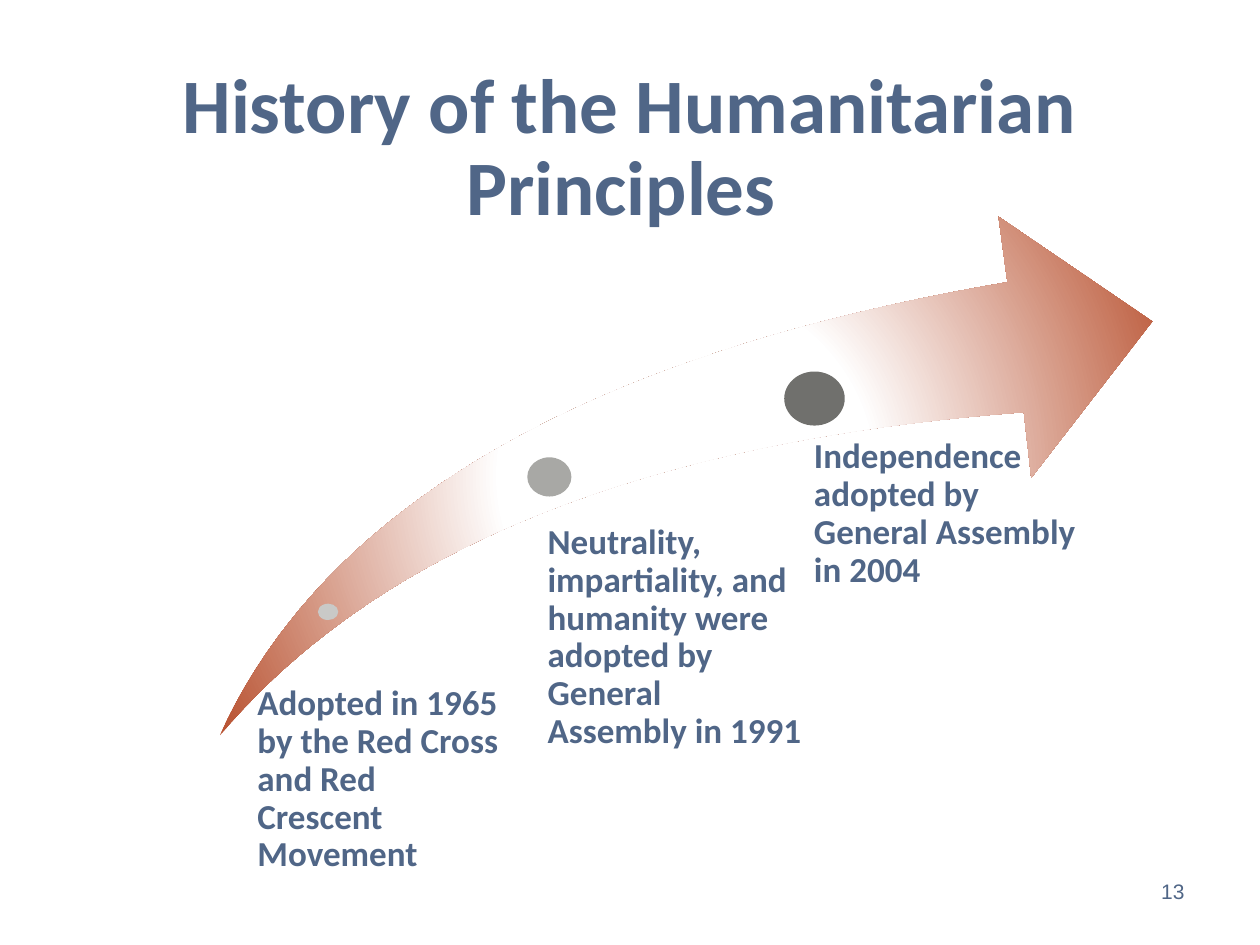
import pptx
import pptx.dml.color
import pptx.enum.shapes
import pptx.enum.text
import pptx.oxml
import pptx.oxml.ns
import pptx.util
from pptx.util import Cm

ALIGN = pptx.enum.text.PP_ALIGN
ANCHOR = pptx.enum.text.MSO_ANCHOR
INK = "506687"
CURVE_STEPS = 40

# Dot box, dot colour, label box, label inset and label, in cm from the arrow's corner
MILESTONES = [
    ((1.98, 7.8, 0.41, 0.33), "C9C9C7", (0.53, 9.45, 5.26, 3.02), 0.23,
     "Adopted in 1965 by the Red Cross and Red Crescent Movement"),
    ((6.2, 4.85, 0.89, 0.79), "A8A8A5", (6.2, 6.2, 5.54, 5.69), 0.41,
     "Neutrality, impartiality, and humanity were adopted by General Assembly in 1991"),
    ((11.38, 3.12, 1.22, 1.09), "70706D", (11.4, 4.47, 6.3, 7.29), 0.58,
     "Independence adopted by General Assembly in 2004"),
]


def color(hex_string):
    return pptx.dml.color.RGBColor.from_string(hex_string)


def set_all(target, values):
    for name, value in values.items():
        setattr(target, name, value)


def within(box, part):
    """Place a part, measured from the corner of a box; all in cm."""
    left, top, width, height = part
    return [Cm(length) for length in (box[0] + left, box[1] + top, width, height)]


def write_text(shape, text, size, font="Calibri", bold=True, align=ALIGN.LEFT,
               anchor=ANCHOR.TOP, spacing=0.9, insets=(0, 0, 0, 0)):
    sides = ("margin_left", "margin_top", "margin_right", "margin_bottom")
    frame = shape.text_frame
    set_all(frame, {"word_wrap": True, "auto_size": pptx.enum.text.MSO_AUTO_SIZE.NONE,
                    "vertical_anchor": anchor})
    set_all(frame, dict(zip(sides, map(Cm, insets))))
    paragraph = frame.paragraphs[0]
    set_all(paragraph, {"alignment": align, "line_spacing": spacing})
    run = paragraph.add_run()
    run.text = text
    set_all(run.font, {"name": font, "size": pptx.util.Pt(size), "bold": bold})
    run.font.color.rgb = color(INK)


def curve(start, control_1, control_2, end):
    """Points along a cubic curve, after its start."""
    points = []
    for step in range(1, CURVE_STEPS + 1):
        t = step / CURVE_STEPS
        weights = ((1 - t) ** 3, 3 * t * (1 - t) ** 2, 3 * t * t * (1 - t), t ** 3)
        corners = (start, control_1, control_2, end)
        points.append(tuple(sum(weight * corner[axis] for weight, corner in zip(weights, corners))
                            for axis in (0, 1)))
    return points


def fill_radial(shape, stops):
    shape.fill.background()
    stop_xml = "".join(f'<a:gs pos="{position * 1000}"><a:srgbClr val="{value}"/></a:gs>'
                       for position, value in stops)
    gradient = pptx.oxml.parse_xml(
        f'<a:gradFill {pptx.oxml.ns.nsdecls("a")} rotWithShape="1"><a:gsLst>{stop_xml}</a:gsLst>'
        '<a:path path="circle"><a:fillToRect l="50000" t="50000" r="50000" b="50000"/></a:path>'
        '</a:gradFill>')
    properties = shape._element.spPr
    properties.replace(properties.find(pptx.oxml.ns.qn("a:noFill")), gradient)


def add_title(slide, box):
    title = slide.shapes.title
    set_all(title, dict(zip(("left", "top", "width", "height"), map(Cm, box))))
    write_text(title, "History of the Humanitarian Principles ", 44, align=ALIGN.CENTER,
               spacing=0.89, insets=(0.18, 0.1, 0.18, 0.1))


def add_arrow(shapes, box):
    tail, shoulder, notch = (0, 10.46), (15.88, 1.32), (16.21, 3.94)
    outline = (curve(tail, (2.11, 5.84), (7.39, 2.77), shoulder)
               + [(15.7, 0), (18.8, 2.11), (16.36, 5.26), notch]
               + curve(notch, (8.53, 4.52), (3.15, 6.71), tail))
    points = [(Cm(box[0] + x), Cm(box[1] + y)) for x, y in outline]
    builder = shapes.build_freeform(Cm(box[0] + tail[0]), Cm(box[1] + tail[1]))
    builder.add_line_segments(points, close=True)
    arrow = builder.convert_to_shape()
    arrow.shadow.inherit = False
    fill_radial(arrow, [(0, "FFFFFF"), (35, "FFFFFF"), (100, "B85130")])
    arrow.line.fill.background()


def add_timeline(slide, box):
    shapes = slide.shapes.add_group_shape().shapes
    add_arrow(shapes, box)
    for dot_box, dot_color, label_box, inset, label in MILESTONES:
        dot = shapes.add_shape(pptx.enum.shapes.MSO_SHAPE.OVAL, *within(box, dot_box))
        dot.shadow.inherit = False
        dot.fill.solid()
        dot.fill.fore_color.rgb = color(dot_color)
        dot.line.fill.background()
        write_text(shapes.add_textbox(*within(box, label_box)), label, 20,
                   insets=(inset, 0, 0, 0))


def add_slide_number(slide, box):
    number = slide.shapes.add_textbox(*map(Cm, box))
    write_text(number, "13", 12, font="Arial", bold=False, align=ALIGN.RIGHT,
               anchor=ANCHOR.MIDDLE, spacing=1.0, insets=(0.25, 0.13, 0.25, 0.13))


def main():
    presentation = pptx.Presentation()
    set_all(presentation, {"slide_width": Cm(25.4), "slide_height": Cm(19.05)})
    slide = presentation.slides.add_slide(presentation.slide_layouts[5])
    add_title(slide, (1.27, 1.27, 22.86, 1.9))
    add_timeline(slide, (4.43, 4.37, 18.8, 10.46))
    add_slide_number(slide, (20.8, 17.4, 3.33, 1.12))
    presentation.save("out.pptx")


if __name__ == "__main__":
    main()
